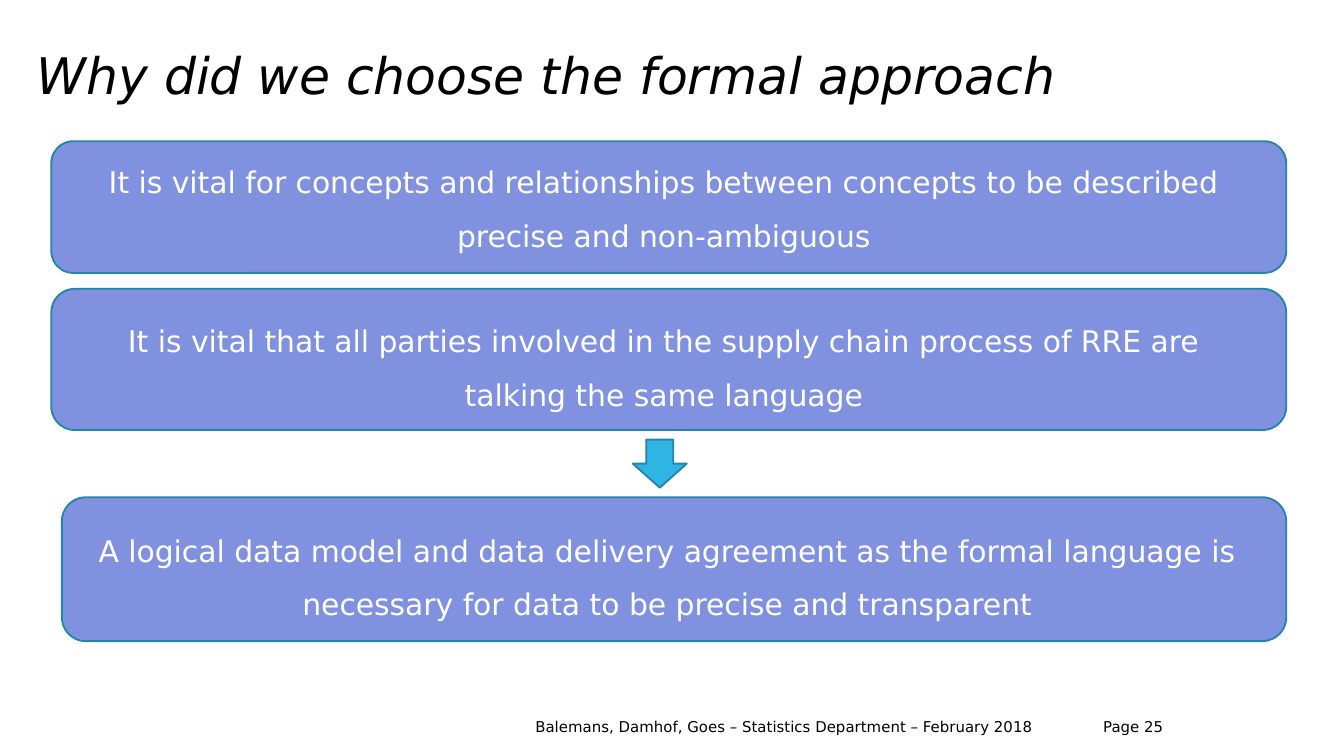
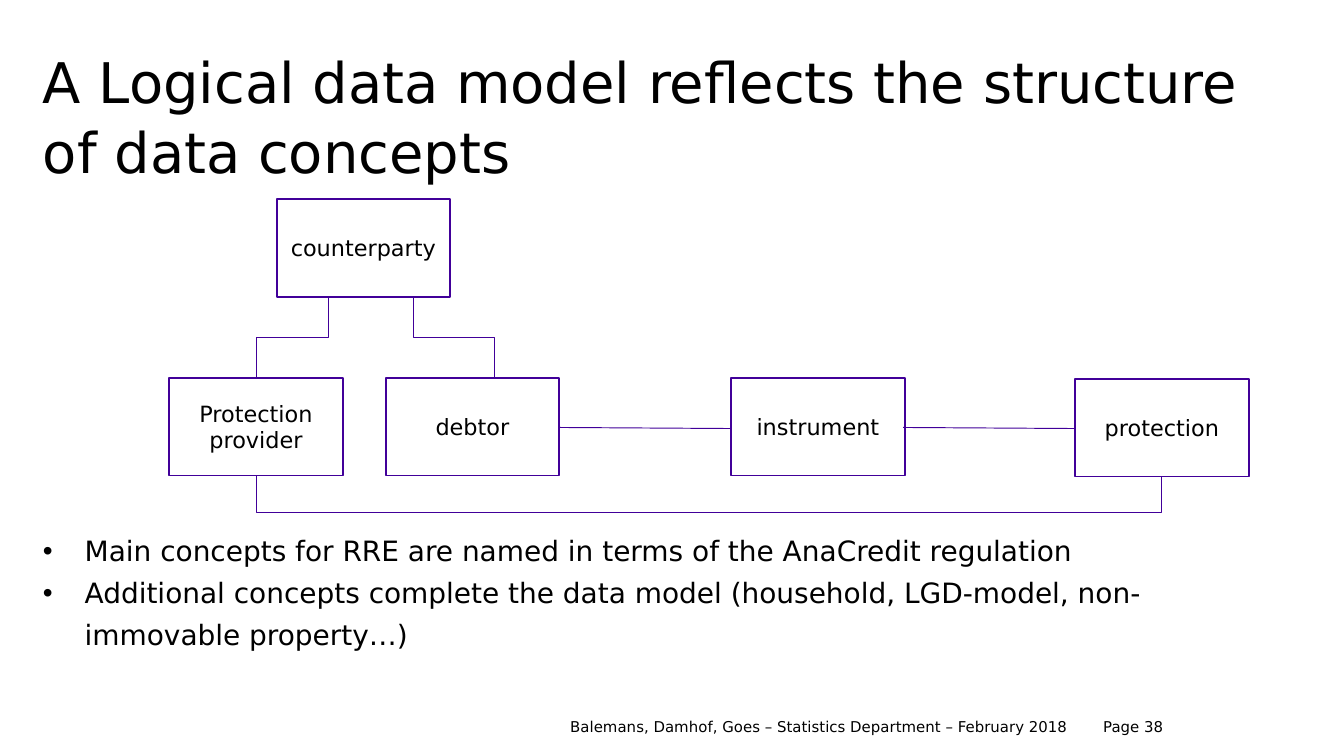
from dataclasses import dataclass

from lxml.etree import SubElement
from pptx import Presentation
from pptx.dml.color import RGBColor
from pptx.enum.shapes import MSO_CONNECTOR, MSO_SHAPE
from pptx.enum.text import MSO_ANCHOR, MSO_AUTO_SIZE, PP_ALIGN
from pptx.oxml.ns import qn
from pptx.util import Cm, Pt

FONT = "DejaVu Sans"
INK = {
    "text": "000000",
    "light": "FFFFFF",
    "panel": "7F91DF",
    "edge": "2386A9",
    "arrow": "2FB5E4",
    "node": "410099",
}
CREDIT = "Balemans, Damhof, Goes – Statistics Department – February 2018"
NODE_W, NODE_H = 3.28, 1.85


@dataclass(frozen=True)
class Box:
    left: float
    top: float
    width: float
    height: float

    def cm(self) -> tuple:
        return Cm(self.left), Cm(self.top), Cm(self.width), Cm(self.height)


@dataclass(frozen=True)
class Panel:
    text: str
    frame: Box
    label: Box


@dataclass(frozen=True)
class Node:
    text: str
    left: float
    top: float


@dataclass(frozen=True)
class Link:
    x1: float
    y1: float
    x2: float
    y2: float
    bend: float | None = None


PANELS = (
    Panel("It is vital for concepts and relationships between concepts "
          "to be described precise and non-ambiguous",
          Box(0.97, 2.67, 23.34, 2.49), Box(1.17, 2.64, 22.76, 2.16)),
    Panel("It is vital that all parties involved in the supply chain "
          "process of RRE are talking the same language",
          Box(0.97, 5.46, 23.34, 2.67), Box(1.17, 5.64, 22.76, 2.31)),
    Panel("A logical data model and data delivery agreement as the formal "
          "language is necessary for data to be precise and transparent",
          Box(1.17, 9.4, 23.14, 2.72), Box(1.3, 9.6, 22.63, 2.16)),
)
NODES = (
    Node("counterparty", 5.23, 3.76),
    Node("Protection provider", 3.2, 7.14),
    Node("debtor", 7.29, 7.14),
    Node("instrument", 13.82, 7.14),
    Node("protection", 20.32, 7.16),
)
LINKS = (
    Link(10.57, 8.08, 13.82, 8.1),
    Link(17.07, 8.08, 20.32, 8.1),
    Link(7.82, 5.61, 9.35, 7.14, 6.38),
    Link(6.2, 5.61, 4.85, 7.14, 6.38),
    Link(4.85, 9.0, 21.95, 9.02, 9.68),
)
POINTS = (
    "Main concepts for RRE are named in terms of the AnaCredit regulation",
    "Additional concepts complete the data model "
    "(household, LGD-model, non-immovable property…)",
)


def tint(name: str) -> RGBColor:
    return RGBColor.from_string(INK[name])


def write(frame, *lines: str, size: float, color: str = "text",
          italic: bool = False, align=PP_ALIGN.LEFT, space=None,
          anchor=MSO_ANCHOR.TOP, inset: float | None = None,
          bullet: bool = False, grow: bool = False) -> None:
    frame.word_wrap = True
    frame.auto_size = (MSO_AUTO_SIZE.SHAPE_TO_FIT_TEXT if grow
                       else MSO_AUTO_SIZE.NONE)
    frame.vertical_anchor = anchor
    if inset is not None:
        frame.margin_left = frame.margin_right = Cm(inset)
        frame.margin_top = frame.margin_bottom = Cm(inset)
    for i, line in enumerate(lines):
        para = frame.add_paragraph() if i else frame.paragraphs[0]
        para.alignment = align
        para.space_before = Pt(0)
        if space is not None:
            para.line_spacing = space
        if bullet:
            props = para._p.get_or_add_pPr()
            props.set("marL", str(Cm(0.79)))
            props.set("indent", str(-Cm(0.79)))
            SubElement(props, qn("a:buChar")).set("char", "•")
        run = para.add_run()
        run.text = line
        font = run.font
        font.name, font.size, font.italic = FONT, Pt(size), italic
        font.color.rgb = tint(color)


def move(shape, box: Box) -> None:
    shape.left, shape.top, shape.width, shape.height = box.cm()


def add_title(slide, text: str, left: float, top: float, **style) -> None:
    title = slide.shapes.title
    move(title, Box(left, top, 23.22, 2.03))
    write(title.text_frame, text, space=Pt(37.5), inset=0, **style)


def add_text(slide, text: str, box: Box, **style) -> None:
    write(slide.shapes.add_textbox(*box.cm()).text_frame, text, **style)


def add_foot(slide, page: int, left: float) -> None:
    add_text(slide, CREDIT, Box(left, 13.44, 12.52, 0.48),
             size=8, align=PP_ALIGN.RIGHT)
    add_text(slide, f"Page {page}", Box(20.6, 13.44, 1.9, 0.48), size=8)


def add_form(slide, kind, box: Box, edge: str, fill: str | None = None):
    shape = slide.shapes.add_shape(kind, *box.cm())
    shape.shadow.inherit = False
    if fill:
        shape.fill.solid()
        shape.fill.fore_color.rgb = tint(fill)
    else:
        shape.fill.background()
    shape.line.color.rgb = tint(edge)
    shape.line.width = Pt(1)
    return shape


def add_link(slide, link: Link) -> None:
    kind = MSO_CONNECTOR.STRAIGHT
    x1, y1, x2, y2 = link.x1, link.y1, link.x2, link.y2
    if link.bend is not None:
        kind = MSO_CONNECTOR.ELBOW
        mid_x, mid_y = (x1 + x2) / 2, (y1 + y2) / 2
        half_w, half_h = (y2 - y1) / 2, abs(x2 - x1) / 2
        x1, x2 = mid_x - half_w, mid_x + half_w
        y1, y2 = mid_y - half_h, mid_y + half_h
    line = slide.shapes.add_connector(kind, Cm(x1), Cm(y1), Cm(x2), Cm(y2))
    line.line.color.rgb = tint("node")
    line.line.width = Pt(0.5)
    props = line._element.spPr
    SubElement(props, qn("a:effectLst"))
    if link.bend is not None:
        right = link.x2 > link.x1
        turn = props.find(qn("a:xfrm"))
        turn.set("rot", str((270 if right else 90) * 60000))
        if right:
            turn.set("flipH", "1")
        ratio = (link.bend - link.y1) / (link.y2 - link.y1)
        guide = SubElement(props.find(qn("a:prstGeom")).find(qn("a:avLst")),
                           qn("a:gd"))
        guide.set("name", "adj1")
        guide.set("fmla", f"val {round(ratio * 100000)}")


def draw_reasons(deck) -> None:
    slide = deck.slides.add_slide(deck.slide_layouts[5])
    add_title(slide, "Why did we choose the formal approach", 0.69, 0.66,
              size=27, italic=True)
    for panel in PANELS:
        add_form(slide, MSO_SHAPE.ROUNDED_RECTANGLE, panel.frame,
                 "edge", "panel")
        add_text(slide, panel.text, panel.label, size=16, color="light",
                 align=PP_ALIGN.CENTER, space=1.5, grow=True)
    add_form(slide, MSO_SHAPE.DOWN_ARROW, Box(11.96, 8.31, 1.02, 0.91),
             "edge", "arrow")
    add_foot(slide, 25, 7.26)


def draw_model(deck) -> None:
    slide = deck.slides.add_slide(deck.slide_layouts[1])
    add_title(slide,
              "A Logical data model reflects the structure of data concepts",
              0.81, 0.84, size=30)
    body = slide.placeholders[1]
    move(body, Box(0.81, 9.93, 23.22, 2.44))
    write(body.text_frame, *POINTS, size=15, space=Pt(22.5), inset=0,
          bullet=True)
    add_foot(slide, 38, 7.92)
    for node in NODES:
        shape = add_form(slide, MSO_SHAPE.RECTANGLE,
                         Box(node.left, node.top, NODE_W, NODE_H), "node")
        write(shape.text_frame, node.text, size=12, align=PP_ALIGN.CENTER,
              anchor=MSO_ANCHOR.MIDDLE)
    for link in LINKS:
        add_link(slide, link)


def main() -> None:
    deck = Presentation()
    deck.slide_width, deck.slide_height = Cm(25.4), Cm(14.29)
    draw_reasons(deck)
    draw_model(deck)
    deck.save("out.pptx")


if __name__ == "__main__":
    main()
